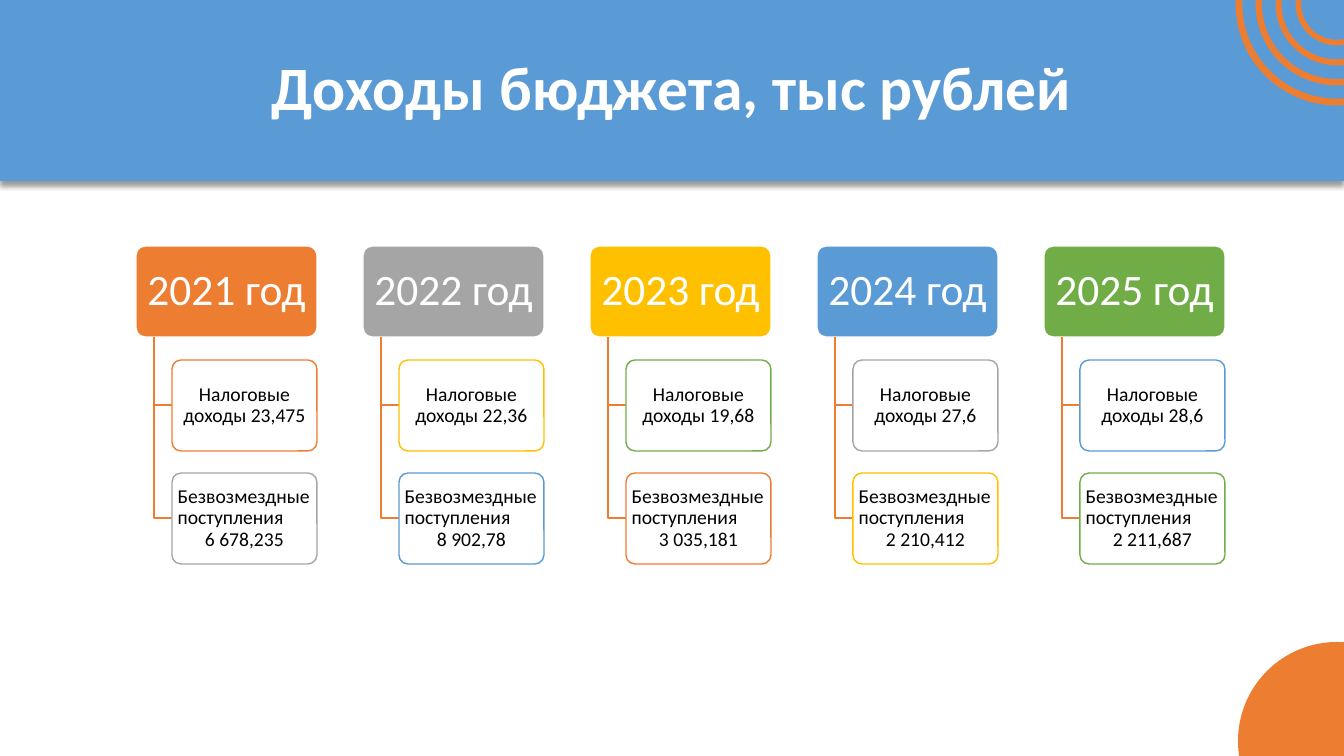
from lxml import etree
from pptx import Presentation
from pptx.dml.color import RGBColor
from pptx.enum.shapes import MSO_SHAPE
from pptx.enum.text import MSO_ANCHOR, PP_ALIGN
from pptx.oxml.ns import qn
from pptx.util import Emu, Pt

SLIDE_W, SLIDE_H = 1344, 756
EMU_PER_PX = 12192000 / SLIDE_W

ORANGE, BLUE, WHITE, BLACK = "ED7D31", "5B9BD5", "FFFFFF", "000000"
ACCENTS = [ORANGE, "A5A5A5", "FFC000", BLUE, "70AD47"]

# Year, tax income, free transfers
INCOME = [
    ("2021 год", "23,475", "6 678,235"),
    ("2022 год", "22,36", "8 902,78"),
    ("2023 год", "19,68", "3 035,181"),
    ("2024 год", "27,6", "2 210,412"),
    ("2025 год", "28,6", "2 211,687"),
]


def px(n):
    return Emu(round(n * EMU_PER_PX))


def rgb(color):
    return RGBColor.from_string(color)


def add_shadow(s, alpha, blur, dist):
    """Black shadow falling straight down; blur and dist in points."""
    effects = s._element.spPr.find(qn("a:effectLst"))
    shadow = etree.SubElement(effects, qn("a:outerShdw"), blurRad=str(Pt(blur)),
                              dist=str(Pt(dist)), dir="5400000", rotWithShape="0")
    color = etree.SubElement(shadow, qn("a:srgbClr"), val=BLACK)
    etree.SubElement(color, qn("a:alpha"), val=str(alpha * 1000))


def add_box(slide, kind, x, y, w, h, fill, line=None, line_pt=1.0, adj=None):
    s = slide.shapes.add_shape(kind, px(x), px(y), px(w), px(h))
    s.shadow.inherit = False
    s.fill.solid()
    s.fill.fore_color.rgb = rgb(fill)
    if line:
        s.line.color.rgb = rgb(line)
        s.line.width = Pt(line_pt)
    else:
        s.line.fill.background()
    if adj is not None:
        s.adjustments[0] = adj
    return s


def write(s, paragraphs, size, color, inset_x, inset_y, bold=False):
    """Fill a shape with (text, alignment) paragraphs."""
    tf = s.text_frame
    tf.word_wrap = True
    tf.vertical_anchor = MSO_ANCHOR.MIDDLE
    tf.margin_left = tf.margin_right = px(inset_x)
    tf.margin_top = tf.margin_bottom = px(inset_y)
    for i, (text, align) in enumerate(paragraphs):
        p = tf.add_paragraph() if i else tf.paragraphs[0]
        p.text = text
        p.alignment = align
        p.line_spacing = 0.9
        p.font.name = "Calibri"
        p.font.size = Pt(size)
        p.font.bold = bold
        p.font.color.rgb = rgb(color)


def add_banner(slide, x, y, w, h):
    s = add_box(slide, MSO_SHAPE.RECTANGLE, x, y, w, h, BLUE)
    add_shadow(s, 40, 4, 3)


def add_title(slide, x, y, w, h, text):
    s = slide.shapes.add_textbox(px(x), px(y), px(w), px(h))
    write(s, [(text, PP_ALIGN.CENTER)], 44, WHITE, 10, 5, bold=True)


def add_corner_circles(slide, center_x, top_y, bottom_y, radius):
    # Solid disc at the bottom
    add_box(slide, MSO_SHAPE.OVAL, center_x - radius, bottom_y - radius,
            2 * radius, 2 * radius, ORANGE)
    # Concentric rings at the top
    for r in range(radius, radius - 80, -20):
        add_box(slide, MSO_SHAPE.DONUT, center_x - r, top_y - r, 2 * r, 2 * r,
                ORANGE, ORANGE, 3.5, adj=0.01)


def add_branch(slide, x, y, end_x, end_y):
    """Elbow line: down from (x, y), then right to the end."""
    builder = slide.shapes.build_freeform(px(x), px(y), scale=1.0)
    builder.add_line_segments([(px(x), px(end_y)), (px(end_x), px(end_y))], close=False)
    s = builder.convert_to_shape()
    s.shadow.inherit = False
    s.fill.background()
    s.line.color.rgb = rgb(ORANGE)
    s.line.width = Pt(1)


def add_year(slide, x, y, w, index, year, tax, transfers):
    box_h, first, step, indent = 91, 114, 113, 36
    # Year header
    s = add_box(slide, MSO_SHAPE.ROUNDED_RECTANGLE, x, y, w, box_h,
                ACCENTS[index], WHITE, adj=0.1)
    write(s, [(year, PP_ALIGN.CENTER)], 31, WHITE, 4, 4)
    # Income items hanging from the header
    items = [
        [(f"Налоговые доходы {tax}", PP_ALIGN.CENTER)],
        [("Безвозмездные поступления", PP_ALIGN.LEFT), (transfers, PP_ALIGN.CENTER)],
    ]
    for i, paragraphs in enumerate(items):
        top = y + first + step * i
        add_branch(slide, x + indent // 2, y + box_h, x + indent, top + box_h // 2)
        s = add_box(slide, MSO_SHAPE.ROUNDED_RECTANGLE, x + indent, top, w - indent, box_h,
                    WHITE, ACCENTS[(2 * index + i) % len(ACCENTS)], adj=0.1)
        write(s, paragraphs, 14, BLACK, 3, 3)


def add_income_tree(slide, x, y, year_w, pitch):
    for i, row in enumerate(INCOME):
        add_year(slide, x + i * pitch, y, year_w, i, *row)


def main():
    prs = Presentation()
    prs.slide_width, prs.slide_height = px(SLIDE_W), px(SLIDE_H)
    slide = prs.slides.add_slide(prs.slide_layouts[6])
    add_banner(slide, 0, 0, SLIDE_W, 181)
    add_corner_circles(slide, 1337, 4, 741, 99)
    add_income_tree(slide, 136, 246, 181, 227)
    add_title(slide, 92, 18, 1159, 146, "Доходы бюджета, тыс рублей")
    prs.save("out.pptx")


if __name__ == "__main__":
    main()
